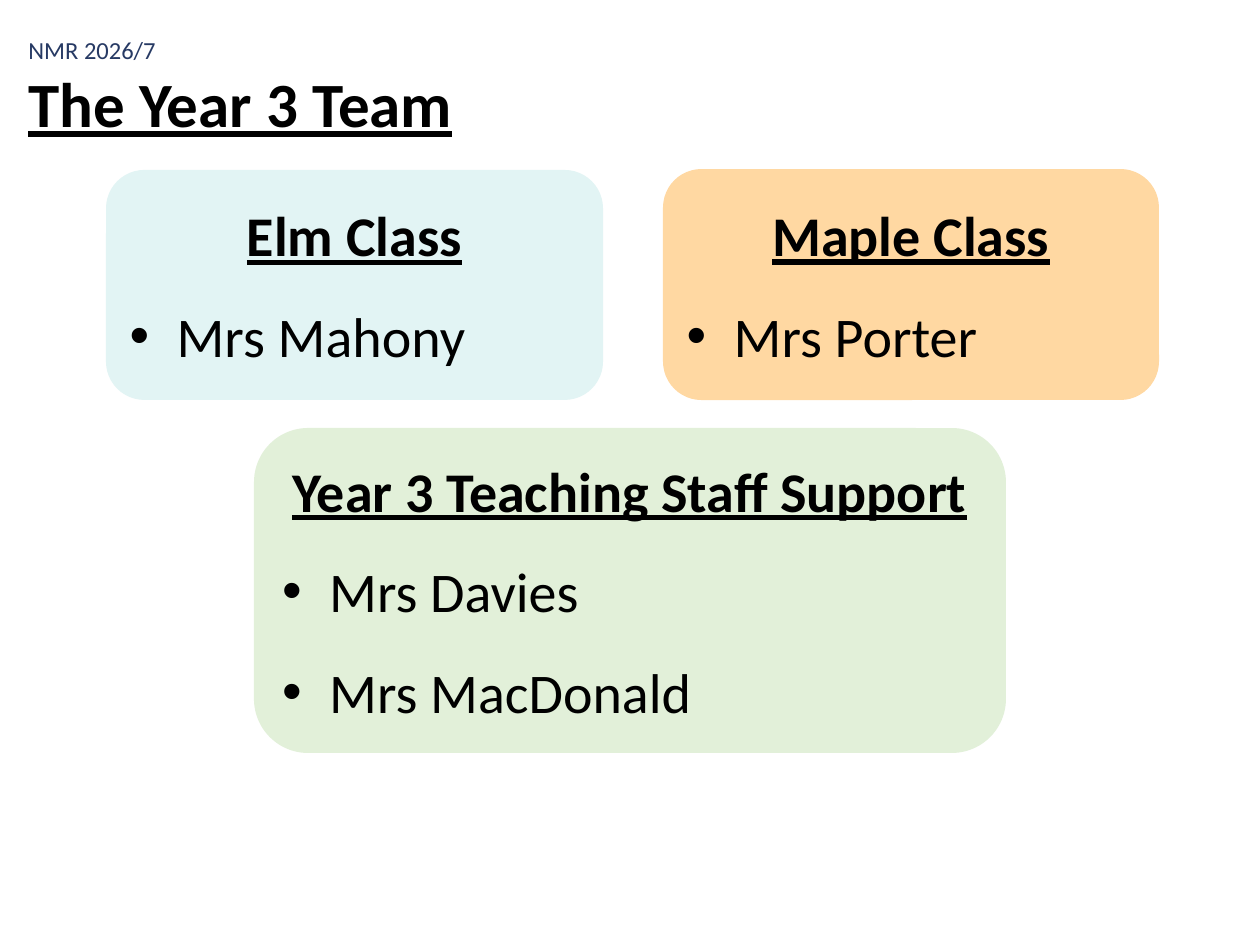
import pptx
import pptx.dml.color
import pptx.enum.shapes
import pptx.enum.text
import pptx.oxml
import pptx.oxml.ns
import pptx.util

PX = 914400 // 126
FONT = "Calibri"
BULLET_INDENT = 47
COLORS = {
    "text": "000000",
    "navy": "273A64",
    "elm": "E2F4F4",
    "maple": "FFD8A2",
    "support": "E2F0D9",
}
CLASS_CARDS = [
    ((663, 169, 496, 231), "maple", "Maple Class", ["Mrs Porter"]),
    ((106, 170, 497, 230), "elm", "Elm Class", ["Mrs Mahony"]),
    ((254, 428, 752, 325), "support", "Year 3 Teaching Staff Support",
     ["Mrs Davies", "Mrs MacDonald"]),
]


def rgb(name):
    return pptx.dml.color.RGBColor.from_string(COLORS[name])


def emu(box):
    return [length * PX for length in box]


def write(frame, text, size, color="text", heading=False, bullet=False, align="LEFT"):
    """Fill the frame's empty first paragraph, or append a new one."""
    paragraph = frame.paragraphs[0]
    if paragraph.runs:
        paragraph = frame.add_paragraph()
    paragraph.alignment = getattr(pptx.enum.text.PP_ALIGN, align)
    if bullet:
        paragraph.line_spacing = 1.5
        properties = paragraph._p.get_or_add_pPr()
        properties.set("marL", str(BULLET_INDENT * PX))
        properties.set("indent", str(-BULLET_INDENT * PX))
        namespace = pptx.oxml.ns.nsdecls("a")
        properties.append(pptx.oxml.parse_xml(f'<a:buFont {namespace} typeface="Arial"/>'))
        properties.append(pptx.oxml.parse_xml(f'<a:buChar {namespace} char="•"/>'))
    run = paragraph.add_run()
    run.text = text
    run.font.name = FONT
    run.font.size = pptx.util.Pt(size)
    run.font.bold = run.font.underline = heading
    run.font.color.rgb = rgb(color)


def add_title(slide, box):
    frame = slide.shapes.add_textbox(*emu(box)).text_frame
    frame.word_wrap = True
    write(frame, "NMR 2026/7", 14, color="navy")
    write(frame, "The Year 3 Team", 36, heading=True)


def add_staff_card(slide, box, color, heading, names):
    card = slide.shapes.add_shape(
        pptx.enum.shapes.MSO_SHAPE.ROUNDED_RECTANGLE, *emu(box))
    card.shadow.inherit = False
    card.fill.solid()
    card.fill.fore_color.rgb = rgb(color)
    card.line.fill.background()
    frame = card.text_frame
    frame.word_wrap = True
    frame.vertical_anchor = pptx.enum.text.MSO_ANCHOR.MIDDLE
    write(frame, heading, 32, heading=True, align="CENTER")
    for name in names:
        write(frame, name, 32, bullet=True)


def main():
    presentation = pptx.Presentation()
    presentation.slide_width = pptx.util.Inches(10)
    presentation.slide_height = pptx.util.Inches(7.5)
    slide = presentation.slides.add_slide(presentation.slide_layouts[6])
    for card in CLASS_CARDS:
        add_staff_card(slide, *card)
    add_title(slide, (16, 29, 798, 158))
    presentation.save("out.pptx")


if __name__ == "__main__":
    main()
